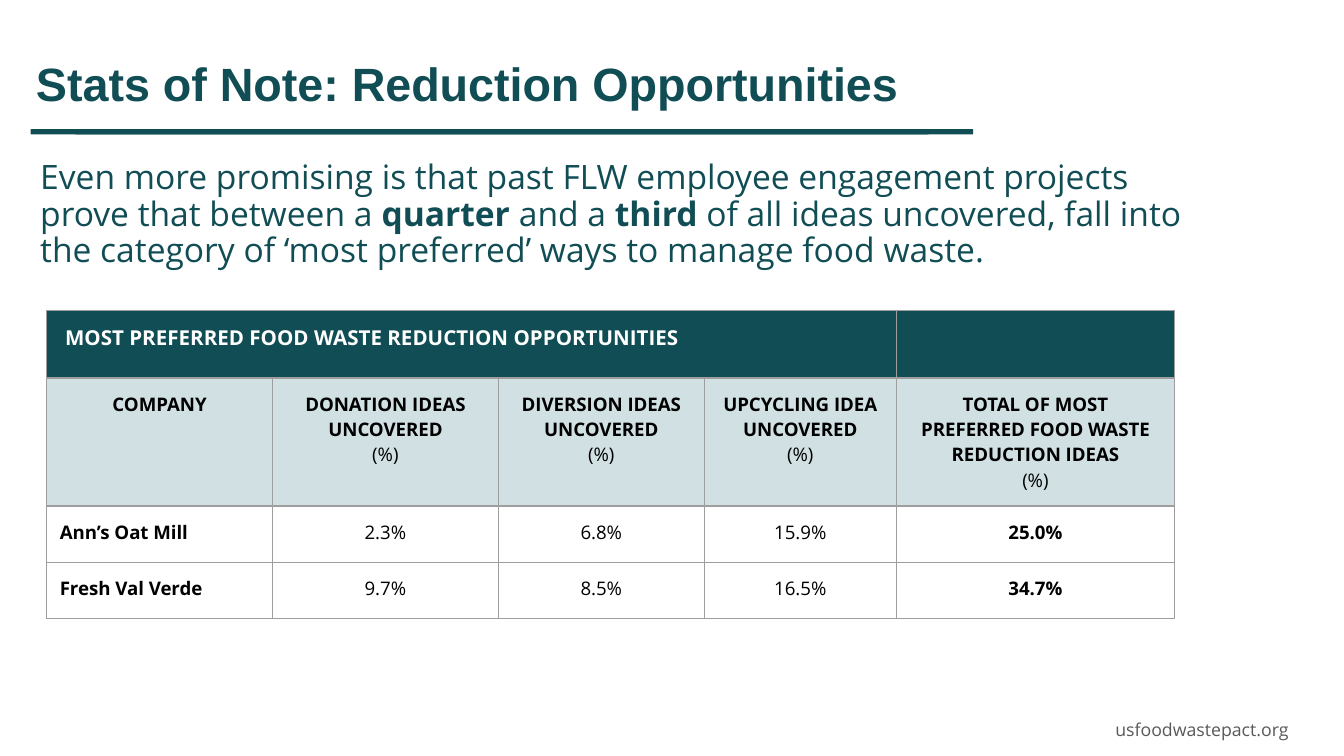
import pptx
import pptx.dml.color
import pptx.enum.shapes
import pptx.enum.text
import pptx.oxml
import pptx.oxml.ns
import pptx.util
from lxml import etree

Cm = pptx.util.Cm
Pt = pptx.util.Pt
ALIGN = pptx.enum.text.PP_ALIGN

TEAL, PALE, WHITE = "114D54", "D0E0E3", "FFFFFF"
BLACK, GREY, BORDER = "000000", "595959", "9E9E9E"
INSET = 0.25


def color(hex_string):
    return pptx.dml.color.RGBColor.from_string(hex_string)


class SlideBuilder:
    """Holds the text style and the current page."""

    heading_font = "Arial"
    text_font = "Open Sans"

    def __init__(self, page):
        self.page = page

    def place(self, box, left, top, width, height):
        box.left, box.top, box.width, box.height = map(Cm, (left, top, width, height))

    def frame(self, box):
        frame = box.text_frame
        frame.word_wrap = True
        frame.auto_size = pptx.enum.text.MSO_AUTO_SIZE.NONE
        frame.vertical_anchor = pptx.enum.text.MSO_ANCHOR.TOP
        frame.margin_left = frame.margin_right = Cm(INSET)
        frame.margin_top = frame.margin_bottom = Cm(INSET)
        return frame

    def style(self, para, size, fill, bold=None, font=None, align=ALIGN.LEFT):
        para.alignment = align
        para.font.name = font or self.text_font
        para.font.size = Pt(size)
        para.font.color.rgb = color(fill)
        para.font.bold = bold

    def title(self, text, *area):
        box = self.page.shapes.title
        self.place(box, *area)
        para = self.frame(box).paragraphs[0]
        para.text = text
        self.style(para, 25, TEAL, True, self.heading_font)

    def body(self, spans, *area):
        """Fill the body placeholder; spans are (text, bold) pairs."""
        box = self.page.placeholders[1]
        self.place(box, *area)
        para = self.frame(box).paragraphs[0]
        for text, bold in spans:
            span = para.add_run()
            span.text = text
            span.font.bold = bold
        properties = para._p.get_or_add_pPr()
        properties.set("marL", "0")
        properties.set("indent", "0")
        etree.SubElement(properties, pptx.oxml.ns.qn("a:buNone"))
        para.space_before = Pt(0)
        para.line_spacing = 0.9
        self.style(para, 18, TEAL)

    def rule(self, *area):
        bar = self.page.shapes.add_shape(
            pptx.enum.shapes.MSO_SHAPE.ROUNDED_RECTANGLE, *map(Cm, area))
        bar.adjustments[0] = 0.11
        bar.shadow.inherit = False
        bar.fill.solid()
        bar.fill.fore_color.rgb = color(TEAL)
        bar.line.fill.background()

    def label(self, text, *area):
        box = self.page.shapes.add_textbox(*map(Cm, area))
        para = self.frame(box).paragraphs[0]
        para.text = text
        para.line_spacing = 1.15
        self.style(para, 9.5, GREY)

    def table(self, left, top, widths, heights):
        box = self.page.shapes.add_table(
            len(heights), len(widths), Cm(left), Cm(top), Cm(sum(widths)), Cm(sum(heights)))
        table = box.table
        for column, width in zip(table.columns, widths):
            column.width = Cm(width)
        for row, height in zip(table.rows, heights):
            row.height = Cm(height)
        return table

    def cell(self, cell, lines, size, fill, ink=BLACK, align=ALIGN.CENTER, left=INSET):
        """Write (text, bold) lines into a cell and draw its borders."""
        cell.margin_left, cell.margin_right = Cm(left), Cm(INSET)
        cell.margin_top = cell.margin_bottom = Cm(INSET)
        for index, (text, bold) in enumerate(lines):
            frame = cell.text_frame
            para = frame.add_paragraph() if index else frame.paragraphs[0]
            para.text = text
            self.style(para, size, ink, bold, align=align)
        properties = cell._tc.get_or_add_tcPr()
        for side in ("lnL", "lnR", "lnT", "lnB"):
            properties.append(pptx.oxml.parse_xml(
                f'<a:{side} {pptx.oxml.ns.nsdecls("a")} w="{Pt(0.75)}"><a:solidFill>'
                f'<a:srgbClr val="{BORDER}"/></a:solidFill></a:{side}>'))
        cell.fill.solid()
        cell.fill.fore_color.rgb = color(fill)


def main():
    deck = pptx.Presentation()
    deck.slide_width, deck.slide_height = Cm(25.4), Cm(14.29)
    page = deck.slides.add_slide(deck.slide_layouts[1])
    builder = SlideBuilder(page)

    # Heading with its two overlapping rules
    for left in (0.58, 1.42):
        builder.rule(left, 2.44, 16.97, 0.1)
    builder.title("Stats of Note: Reduction Opportunities", 0.43, 0.79, 23.67, 2.51)

    # Introduction
    builder.body([
        ("Even more promising is that past FLW employee engagement projects "
         "prove that between a ", False),
        ("quarter ", True), ("and a ", False), ("third ", True),
        ("of all ideas uncovered, fall into the category of ‘most preferred’ "
         "ways to manage food waste.", False),
    ], 0.51, 2.79, 22.73, 2.72)

    # Table banner
    table = builder.table(0.88, 5.87, (4.27, 4.27, 3.89, 3.63, 5.26),
                          (1.23, 2.42, 1.06, 1.06))
    for column in range(5):
        lines = [] if column else [("MOST PREFERRED FOOD WASTE REDUCTION OPPORTUNITIES", True)]
        builder.cell(table.cell(0, column), lines, 11, TEAL, WHITE, ALIGN.LEFT, 0.35)
    table.cell(0, 0).merge(table.cell(0, 3))

    # Column headings
    headings = ("COMPANY", "DONATION IDEAS UNCOVERED", "DIVERSION IDEAS UNCOVERED",
                "UPCYCLING IDEA UNCOVERED",
                "TOTAL OF MOST PREFERRED FOOD WASTE REDUCTION IDEAS")
    for column, heading in enumerate(headings):
        lines = [(heading, True)] + ([("(%)", False)] if column else [])
        builder.cell(table.cell(1, column), lines, 10, PALE)

    # Company results: name and total are bold
    results = (("Ann’s Oat Mill", "2.3%", "6.8%", "15.9%", "25.0%"),
               ("Fresh Val Verde", "9.7%", "8.5%", "16.5%", "34.7%"))
    for row, values in enumerate(results, start=2):
        for column, value in enumerate(values):
            builder.cell(table.cell(row, column), [(value, column in (0, 4))], 10, WHITE,
                         align=ALIGN.CENTER if column else ALIGN.LEFT)

    # Footer
    builder.label("usfoodwastepact.org", 20.83, 13.28, 4.19, 0.48)

    deck.save("out.pptx")


if __name__ == "__main__":
    main()
